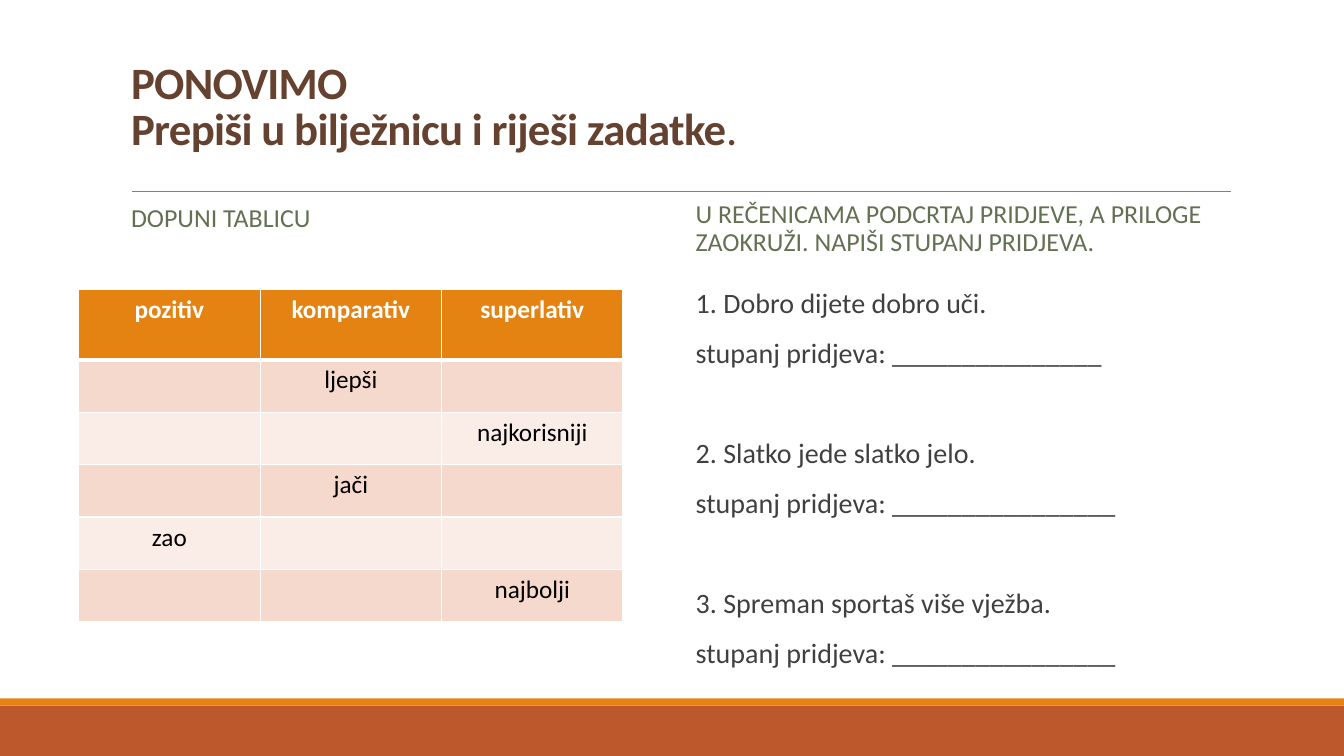
from dataclasses import dataclass

from lxml import etree
from pptx import Presentation
from pptx.dml.color import RGBColor
from pptx.enum.shapes import MSO_CONNECTOR, MSO_SHAPE
from pptx.enum.text import MSO_ANCHOR, MSO_AUTO_SIZE, PP_ALIGN
from pptx.oxml.ns import qn
from pptx.util import Inches, Pt

RECTANGLE = MSO_SHAPE.RECTANGLE
STRAIGHT = MSO_CONNECTOR.STRAIGHT
TOP, MIDDLE, BOTTOM = MSO_ANCHOR.TOP, MSO_ANCHOR.MIDDLE, MSO_ANCHOR.BOTTOM
LEFT, CENTER = PP_ALIGN.LEFT, PP_ALIGN.CENTER
FIXED_SIZE = MSO_AUTO_SIZE.NONE

FONT = "Calibri"
WHITE, BLACK, ORANGE, RUST = "FFFFFF", "000000", "E48312", "BD582C"
BROWN, GREEN, GRAY, RULE_GRAY = "654130", "637052", "404040", "808080"
ROW_TINTS = ("FAEDE7", "F5D9CC")


@dataclass
class Passage:
    index: int
    box: tuple[float, float, float, float]
    text: str
    size: float
    color: str
    anchor: MSO_ANCHOR
    line_spacing: float = 0.9
    before: float = 12
    after: float = 2
    bold: bool = False


@dataclass
class Band:
    top: float
    height: float
    color: str


PASSAGES = (
    Passage(0, (1.2, 0.31, 11, 1.27),
            "PONOVIMO\vPrepiši u bilježnicu i riješi zadatke",
            32, BROWN, BOTTOM, 0.85, 0, 0, True),
    Passage(1, (1.2, 1.77, 5.4, 0.81), "DOPUNI TABLICU", 18.5, GREEN, MIDDLE),
    Passage(3, (6.8, 1.87, 5.4, 0.81),
            "U REČENICAMA PODCRTAJ PRIDJEVE, A PRILOGE ZAOKRUŽI. "
            "NAPIŠI STUPANJ PRIDJEVA.", 18.5, GREEN, MIDDLE),
    Passage(4, (6.8, 2.82, 5.4, 4.07),
            "1. Dobro dijete dobro uči.\n"
            "stupanj pridjeva: _______________\n"
            "2. Slatko jede slatko jelo.\n"
            "stupanj pridjeva: ________________\n"
            "3. Spreman sportaš više vježba.\n"
            "stupanj pridjeva: ________________", 20, GRAY, TOP),
)
BANDS = (Band(7, 0.5, RUST), Band(6.93, 0.07, ORANGE))
DEGREES = (
    ("pozitiv", "komparativ", "superlativ"),
    ("", "ljepši", ""),
    ("", "", "najkorisniji"),
    ("", "jači", ""),
    ("zao", "", ""),
    ("", "", "najbolji"),
)
HEADER_HEIGHT, ROW_HEIGHT, COLUMN_WIDTH = 0.7, 0.52, 1.8
EXERCISE_GAP = 48


def rgb(color: str) -> RGBColor:
    return RGBColor.from_string(color)


def style_font(font, size: float, color: str, bold: bool) -> None:
    font.name = FONT
    font.size = Pt(size)
    font.bold = bold
    font.color.rgb = rgb(color)


def write_passage(slide, passage: Passage):
    holder = slide.placeholders[passage.index]
    holder.left, holder.top, holder.width, holder.height = map(Inches, passage.box)
    frame = holder.text_frame
    frame.text = passage.text
    frame.word_wrap = True
    frame.auto_size = FIXED_SIZE
    frame.vertical_anchor = passage.anchor
    for paragraph in frame.paragraphs:
        paragraph.alignment = LEFT
        paragraph.line_spacing = passage.line_spacing
        paragraph.space_before = Pt(passage.before)
        paragraph.space_after = Pt(passage.after)
        properties = paragraph._p.get_or_add_pPr()
        properties.set("marL", "0")
        properties.set("indent", "0")
        etree.SubElement(properties, qn("a:buNone"))
        for run in paragraph.runs:
            style_font(run.font, passage.size, passage.color, passage.bold)
    return frame


def finish_title(frame, heading: Passage) -> None:
    paragraph = frame.paragraphs[0]
    full_stop = paragraph.add_run()
    full_stop.text = "."
    style_font(full_stop.font, heading.size, heading.color, False)
    for run in paragraph.runs:
        run.font._element.set("spc", "-50")


def draw_band(slide, band: Band, width: int) -> None:
    strip = slide.shapes.add_shape(
        RECTANGLE, 0, Inches(band.top), width, Inches(band.height))
    strip.shadow.inherit = False
    strip.fill.solid()
    strip.fill.fore_color.rgb = rgb(band.color)
    strip.line.fill.background()


def draw_rule(slide) -> None:
    rule = slide.shapes.add_connector(
        STRAIGHT, Inches(1.31), Inches(1.9), Inches(12.21), Inches(1.9))
    rule.line.color.rgb = rgb(RULE_GRAY)
    rule.line.width = Pt(0.5)
    etree.SubElement(rule._element.spPr, qn("a:effectLst"))


def add_border(cell, side: str, width: float) -> None:
    border = etree.SubElement(
        cell._tc.get_or_add_tcPr(), qn(f"a:{side}"), w=str(Pt(width)))
    fill = etree.SubElement(border, qn("a:solidFill"))
    etree.SubElement(fill, qn("a:srgbClr"), val=WHITE)


def draw_degrees(slide) -> None:
    columns = len(DEGREES[0])
    height = HEADER_HEIGHT + ROW_HEIGHT * (len(DEGREES) - 1)
    degrees = slide.shapes.add_table(
        len(DEGREES), columns, Inches(0.78), Inches(2.87),
        Inches(COLUMN_WIDTH * columns), Inches(height)).table
    for column in degrees.columns:
        column.width = Inches(COLUMN_WIDTH)
    for row, words in enumerate(DEGREES):
        header = row == 0
        degrees.rows[row].height = Inches(HEADER_HEIGHT if header else ROW_HEIGHT)
        for column, word in enumerate(words):
            cell = degrees.cell(row, column)
            add_border(cell, "lnL", 1)
            add_border(cell, "lnR", 1)
            add_border(cell, "lnT", 3 if row == 1 else 1)
            add_border(cell, "lnB", 3 if header else 1)
            cell.fill.solid()
            cell.fill.fore_color.rgb = rgb(ORANGE if header else ROW_TINTS[row % 2])
            if word:
                cell.text_frame.text = word
                paragraph = cell.text_frame.paragraphs[0]
                paragraph.alignment = CENTER
                style_font(paragraph.runs[0].font, 18,
                           WHITE if header else BLACK, header)


def main() -> None:
    presentation = Presentation()
    presentation.slide_width = Inches(13.33)
    presentation.slide_height = Inches(7.5)
    slide = presentation.slides.add_slide(presentation.slide_layouts[4])

    unused = slide.placeholders[2]._element
    unused.getparent().remove(unused)

    title, _, _, exercises = [write_passage(slide, item) for item in PASSAGES]
    finish_title(title, PASSAGES[0])
    exercises.margin_left = exercises.margin_right = 0
    for paragraph in exercises.paragraphs:
        paragraph._p.get_or_add_pPr().set("marL", str(Inches(0.1)))
    for question in exercises.paragraphs[2::2]:
        question.space_before = Pt(EXERCISE_GAP)

    for band in BANDS:
        draw_band(slide, band, presentation.slide_width)
    draw_rule(slide)
    draw_degrees(slide)
    presentation.save("out.pptx")


if __name__ == "__main__":
    main()
